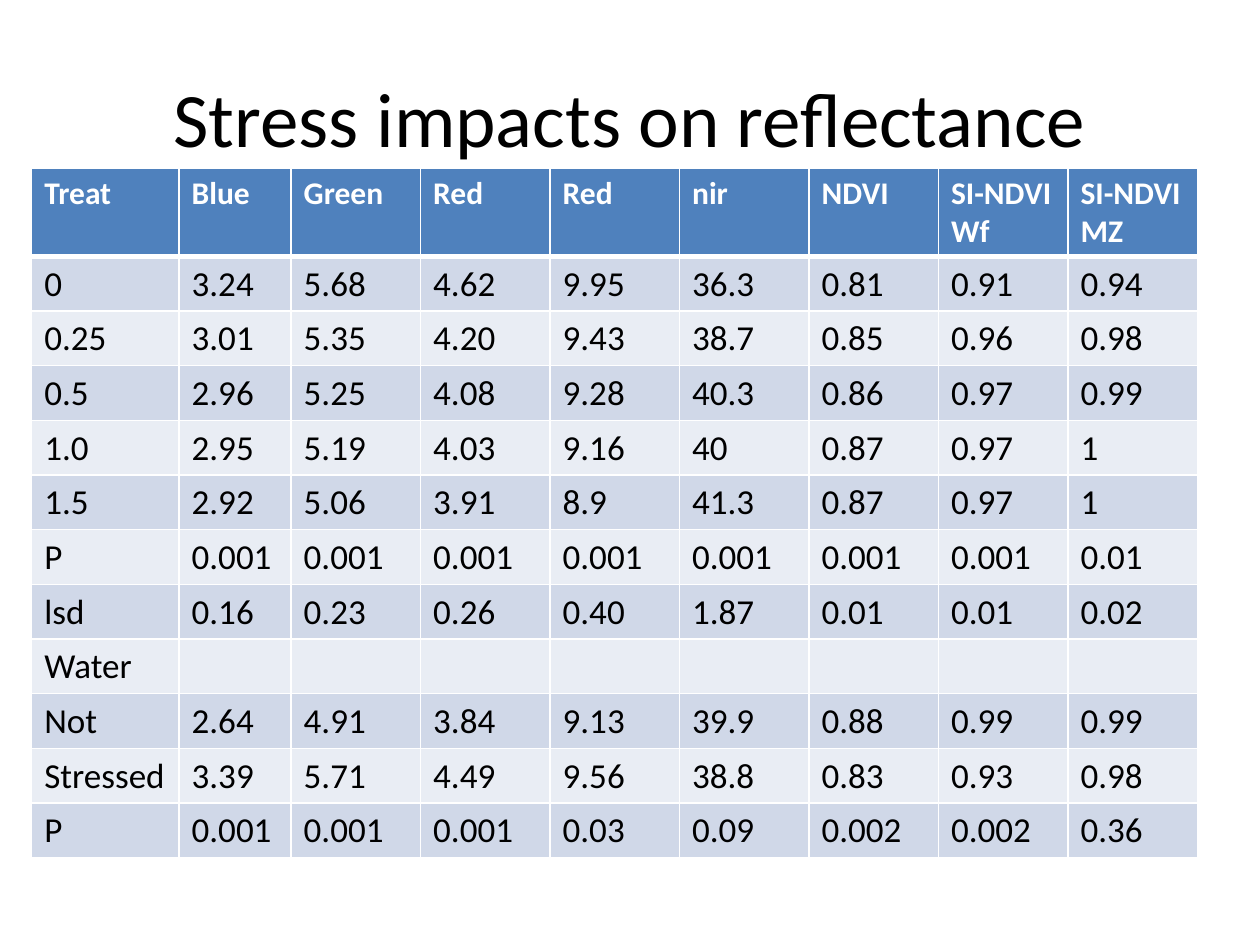
from lxml.etree import SubElement
from pptx import Presentation
from pptx.dml.color import RGBColor
from pptx.enum.text import MSO_ANCHOR, PP_ALIGN
from pptx.oxml.ns import qn
from pptx.util import Cm, Pt

COLORS = {
    "text": "000000",
    "header_text": "FFFFFF",
    "header": "4F81BD",
    "odd_row": "D0D8E8",
    "even_row": "E9EDF4",
    "border": "FFFFFF",
}
TITLE_FORMAT = {"name": "Calibri", "size": Pt(44), "bold": False}
HEADER_FORMAT = {"name": "Calibri", "size": Pt(18), "bold": True}
BODY_FORMAT = {"name": "Calibri", "size": Pt(20), "bold": False}

HEADINGS = ["Treat", "Blue", "Green", "Red", "Red", "nir", "NDVI",
            "SI-NDVI\nWf", "SI-NDVI\nMZ"]
READINGS = [
    ["0", "3.24", "5.68", "4.62", "9.95", "36.3", "0.81", "0.91", "0.94"],
    ["0.25", "3.01", "5.35", "4.20", "9.43", "38.7", "0.85", "0.96", "0.98"],
    ["0.5", "2.96", "5.25", "4.08", "9.28", "40.3", "0.86", "0.97", "0.99"],
    ["1.0", "2.95", "5.19", "4.03", "9.16", "40", "0.87", "0.97", "1"],
    ["1.5", "2.92", "5.06", "3.91", "8.9", "41.3", "0.87", "0.97", "1"],
    ["P"] + ["0.001"] * 7 + ["0.01"],
    ["lsd", "0.16", "0.23", "0.26", "0.40", "1.87", "0.01", "0.01", "0.02"],
    ["Water"] + [""] * 8,
    ["Not", "2.64", "4.91", "3.84", "9.13", "39.9", "0.88", "0.99", "0.99"],
    ["Stressed", "3.39", "5.71", "4.49", "9.56", "38.8", "0.83", "0.93", "0.98"],
    ["P", "0.001", "0.001", "0.001", "0.03", "0.09", "0.002", "0.002", "0.36"],
]
COLUMN_WIDTHS = [Cm(2.97), Cm(2.26)] + [Cm(2.61)] * 7


def format_text(frame, font_format, color):
    for paragraph in frame.paragraphs:
        for attribute, value in font_format.items():
            setattr(paragraph.font, attribute, value)
        paragraph.font.color.rgb = RGBColor.from_string(COLORS[color])


def set_borders(cell, widths):
    """Draw the cell's sides; widths maps L, R, T and B to points."""
    properties = cell._tc.get_or_add_tcPr()
    for side, width in widths.items():
        line = SubElement(properties, qn(f"a:ln{side}"), w=str(Pt(width)))
        fill = SubElement(line, qn("a:solidFill"))
        SubElement(fill, qn("a:srgbClr"), val=COLORS["border"])


def add_title(slide, left, top, width, height):
    title = slide.shapes.add_textbox(left, top, width, height).text_frame
    title.word_wrap = True
    title.vertical_anchor = MSO_ANCHOR.MIDDLE
    title.text = "Stress impacts on reflectance"
    title.paragraphs[0].alignment = PP_ALIGN.CENTER
    format_text(title, TITLE_FORMAT, "text")


def add_reflectance_table(slide, left, top, width, height):
    rows = [HEADINGS] + READINGS
    table = slide.shapes.add_table(
        len(rows), len(HEADINGS), left, top, width, height).table
    for column, column_width in zip(table.columns, COLUMN_WIDTHS):
        column.width = column_width

    for row_index, values in enumerate(rows):
        if row_index == 0:
            row_fill, text_color, font_format = "header", "header_text", HEADER_FORMAT
        else:
            row_fill = "odd_row" if row_index % 2 else "even_row"
            text_color, font_format = "text", BODY_FORMAT
        borders = {"L": 1, "R": 1,
                   "T": 3 if row_index == 1 else 1,
                   "B": 3 if row_index == 0 else 1}
        for column_index, value in enumerate(values):
            cell = table.cell(row_index, column_index)
            cell.text = value
            format_text(cell.text_frame, font_format, text_color)
            set_borders(cell, borders)
            cell.fill.solid()
            cell.fill.fore_color.rgb = RGBColor.from_string(COLORS[row_fill])


def main():
    presentation = Presentation()
    presentation.slide_width, presentation.slide_height = Cm(25.4), Cm(19.05)
    slide = presentation.slides.add_slide(presentation.slide_layouts[6])
    add_title(slide, Cm(1.27), Cm(0.76), Cm(22.86), Cm(3.18))
    add_reflectance_table(slide, Cm(0.64), Cm(3.39), sum(COLUMN_WIDTHS), Cm(12.5))
    presentation.save("out.pptx")


if __name__ == "__main__":
    main()
